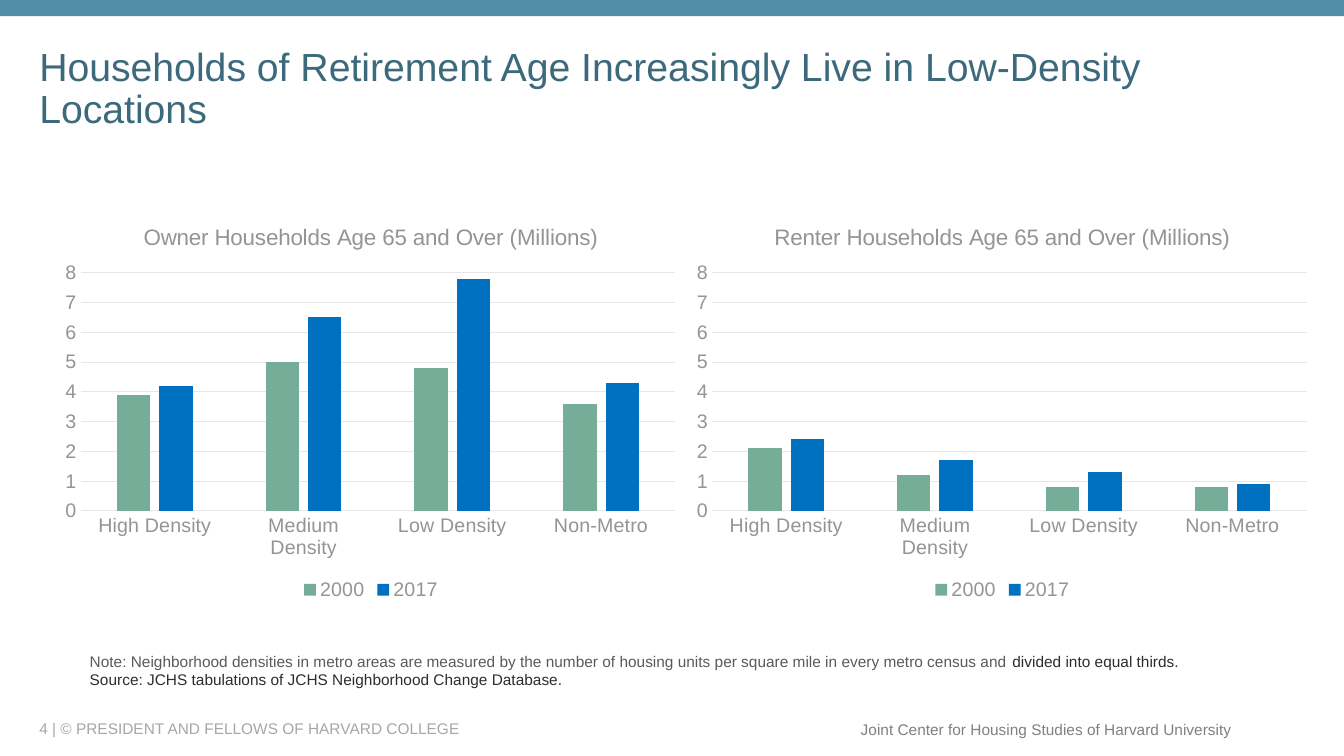
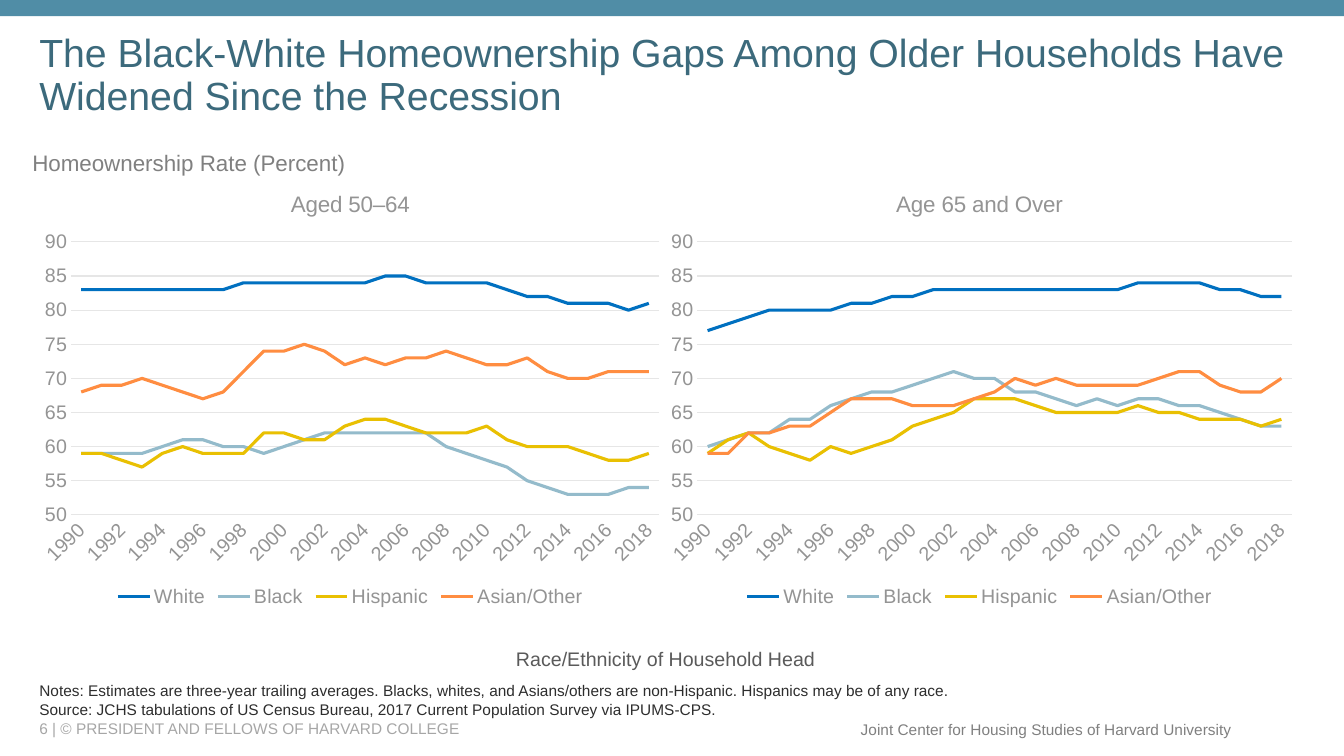
from lxml.etree import SubElement
from pptx import Presentation
from pptx.chart.data import CategoryChartData
from pptx.dml.color import RGBColor
from pptx.enum.chart import XL_CHART_TYPE, XL_LEGEND_POSITION, XL_TICK_MARK
from pptx.enum.shapes import MSO_SHAPE
from pptx.enum.text import MSO_ANCHOR, PP_ALIGN
from pptx.oxml.ns import qn
from pptx.util import Pt

FONT = "Arial"
COLORS = {
    "band": "508DA6", "title": "3C6A7C", "dark": "2D2D2D", "body": "5A5A5A",
    "foot": "808080", "page": "A6A6A6", "axis": "949494", "grid": "E6E6E6",
    "green": "76AD99", "blue": "0070C0", "mist": "94BBCB",
    "gold": "E9C002", "orange": "FF8D41",
}
DENSITY = ["High Density", "Medium Density", "Low Density", "Non-Metro"]
YEARS = [str(year) for year in range(1990, 2019)]

OWNERS = {"2000": [3.9, 5, 4.8, 3.6], "2017": [4.2, 6.5, 7.8, 4.3]}
RENTERS = {"2000": [2.1, 1.2, 0.8, 0.8], "2017": [2.4, 1.7, 1.3, 0.9]}
MIDDLE = {
    "White": [83, 83, 83, 83, 83, 83, 83, 83, 84, 84, 84, 84, 84, 84, 84,
              85, 85, 84, 84, 84, 84, 83, 82, 82, 81, 81, 81, 80, 81],
    "Black": [59, 59, 59, 59, 60, 61, 61, 60, 60, 59, 60, 61, 62, 62, 62,
              62, 62, 62, 60, 59, 58, 57, 55, 54, 53, 53, 53, 54, 54],
    "Hispanic": [59, 59, 58, 57, 59, 60, 59, 59, 59, 62, 62, 61, 61, 63, 64,
                 64, 63, 62, 62, 62, 63, 61, 60, 60, 60, 59, 58, 58, 59],
    "Asian/Other": [68, 69, 69, 70, 69, 68, 67, 68, 71, 74, 74, 75, 74, 72, 73,
                    72, 73, 73, 74, 73, 72, 72, 73, 71, 70, 70, 71, 71, 71],
}
SENIOR = {
    "White": [77, 78, 79, 80, 80, 80, 80, 81, 81, 82, 82, 83, 83, 83, 83,
              83, 83, 83, 83, 83, 83, 84, 84, 84, 84, 83, 83, 82, 82],
    "Black": [60, 61, 62, 62, 64, 64, 66, 67, 68, 68, 69, 70, 71, 70, 70,
              68, 68, 67, 66, 67, 66, 67, 67, 66, 66, 65, 64, 63, 63],
    "Hispanic": [59, 61, 62, 60, 59, 58, 60, 59, 60, 61, 63, 64, 65, 67, 67,
                 67, 66, 65, 65, 65, 65, 66, 65, 65, 64, 64, 64, 63, 64],
    "Asian/Other": [59, 59, 62, 62, 63, 63, 65, 67, 67, 67, 66, 66, 66, 67, 68,
                    70, 69, 70, 69, 69, 69, 69, 70, 71, 71, 69, 68, 68, 70],
}


def paint(name):
    return RGBColor.from_string(COLORS[name])


def style(font, size, color):
    font.name, font.size, font.bold = FONT, Pt(size), False
    font.color.rgb = paint(color)


def add_text(slide, box, lines, size, anchor=MSO_ANCHOR.TOP, align=PP_ALIGN.LEFT,
             wrap=True, space=None):
    """Add a text box; each line is a list of (text, color) runs."""
    frame = slide.shapes.add_textbox(*map(Pt, box)).text_frame
    frame.word_wrap = wrap
    frame.vertical_anchor = anchor
    for index, line in enumerate(lines):
        para = frame.add_paragraph() if index else frame.paragraphs[0]
        para.alignment = align
        para.line_spacing = space
        for text, color in line:
            run = para.add_run()
            run.text = text
            style(run.font, size, color)


def add_base(deck, title, top, page):
    """Add a slide with its band, title and footers."""
    slide = deck.slides.add_slide(deck.slide_layouts[6])
    band = slide.shapes.add_shape(MSO_SHAPE.RECTANGLE, 0, 0, deck.slide_width, Pt(11.5))
    band.shadow.inherit = False
    band.fill.solid()
    band.fill.fore_color.rgb = paint("band")
    band.line.fill.background()
    middle = MSO_ANCHOR.MIDDLE
    add_text(slide, (21, top, 911, 70), [[(title, "title")]], 28, middle, space=0.9)
    add_text(slide, (21, 513.4, 570, 14.4),
             [[(f"{page} | © PRESIDENT AND FELLOWS OF HARVARD COLLEGE", "page")]], 11, middle)
    add_text(slide, (606.2, 510.5, 280.8, 20.9),
             [[("Joint Center for Housing Studies of Harvard University", "foot")]],
             11, middle, PP_ALIGN.RIGHT, wrap=False)
    return slide


def set_plot(chart, area):
    """Fix the inner plot area, as shares of the chart (x, y, w, h)."""
    plot = chart.element.xpath("c:chart/c:plotArea")[0]
    for old in plot.findall(qn("c:layout")):
        plot.remove(old)
    layout = SubElement(plot, qn("c:layout"))
    plot.insert(0, layout)
    manual = SubElement(layout, qn("c:manualLayout"))
    parts = [("layoutTarget", "inner"), ("xMode", "edge"), ("yMode", "edge")]
    for tag, value in parts + list(zip("xywh", area)):
        SubElement(manual, qn(f"c:{tag}")).set("val", str(value))


def add_graph(slide, box, kind, title, cats, data, scale, area):
    """Add a titled chart; scale is (minimum, maximum, step)."""
    source = CategoryChartData(number_format="General")
    source.categories = cats
    for name, values in data.items():
        source.add_series(name, values)
    chart = slide.shapes.add_chart(kind, *map(Pt, box), source).chart
    style(chart.font, 14, "axis")
    chart.has_title = True
    run = chart.chart_title.text_frame.paragraphs[0].add_run()
    run.text = title
    style(run.font, 16, "axis")
    chart.has_legend = True
    chart.legend.position = XL_LEGEND_POSITION.BOTTOM
    chart.legend.include_in_layout = False
    style(chart.legend.font, 14, "axis")
    for axis in (chart.category_axis, chart.value_axis):
        axis.major_tick_mark = axis.minor_tick_mark = XL_TICK_MARK.NONE
        style(axis.tick_labels.font, 14, "axis")
    rules = chart.value_axis
    rules.minimum_scale, rules.maximum_scale, rules.major_unit = scale
    rules.tick_labels.number_format = "0"
    rules.tick_labels.number_format_is_linked = False
    rules.format.line.fill.background()
    for line in (chart.category_axis.format.line, rules.major_gridlines.format.line):
        line.color.rgb = paint("grid")
        line.width = Pt(0.75)
    set_plot(chart, area)
    return chart


def add_bars(slide, box, title, data):
    chart = add_graph(slide, box, XL_CHART_TYPE.COLUMN_CLUSTERED, title, DENSITY,
                      data, (0, 8, 1), (0.043, 0.168, 0.936, 0.597))
    plot = chart.plots[0]
    plot.vary_by_categories = False
    plot.gap_width, plot.overlap = 219, -27
    for series, color in zip(plot.series, ("green", "blue")):
        series.format.fill.solid()
        series.format.fill.fore_color.rgb = paint(color)


def add_lines(slide, box, title, data):
    chart = add_graph(slide, box, XL_CHART_TYPE.LINE, title, YEARS,
                      data, (50, 90, 5), (0.065, 0.16, 0.916, 0.62))
    plot = chart.plots[0]
    plot.vary_by_categories = False
    for series, color in zip(plot.series, ("blue", "mist", "gold", "orange")):
        series.smooth = False
        series.format.line.color.rgb = paint(color)
        series.format.line.width = Pt(2.25)
    axis = chart.element.xpath("c:chart/c:plotArea/c:catAx")[0]
    axis.xpath("c:txPr/a:bodyPr")[0].set("rot", "-2700000")
    skip = SubElement(axis, qn("c:tickLblSkip"))
    skip.set("val", "2")
    axis.find(qn("c:noMultiLvlLbl")).addprevious(skip)


def add_density(deck):
    slide = add_base(
        deck, "Households of Retirement Age Increasingly Live in Low-Density Locations", 29, 4)
    add_text(slide, (57, 453.5, 846, 42), [
        [("Note: Neighborhood densities in metro areas are measured by the number of "
          "housing units per square mile in every metro census and ", "body"),
         ("divided into equal thirds.", "dark")],
        [("Source: JCHS tabulations of JCHS Neighborhood Change Database.", "dark")],
    ], 11, MSO_ANCHOR.BOTTOM)
    for left, group, data in ((38, "Owner", OWNERS), (489, "Renter", RENTERS)):
        add_bars(slide, (left, 147, 454, 285),
                 f"{group} Households Age 65 and Over (Millions)", data)


def add_gaps(deck):
    slide = add_base(
        deck, "The Black-White Homeownership Gaps Among Older Households Have "
        "Widened Since the Recession", 19.5, 6)
    add_text(slide, (21, 474.5, 846, 42), [
        [("Notes: Estimates are three-year trailing averages. Blacks, whites, and "
          "Asians/others are non-Hispanic. Hispanics may be of any race.", "dark")],
        [("Source: JCHS tabulations of US Census Bureau, 2017 Current Population "
          "Survey via IPUMS-CPS.", "dark")],
    ], 11, MSO_ANCHOR.BOTTOM)
    add_lines(slide, (21, 122.5, 458.5, 314.5), "Aged 50–64", MIDDLE)
    add_lines(slide, (468, 122.5, 463.5, 314.5), "Age 65 and Over", SENIOR)
    add_text(slide, (16, 103, 396, 26.5), [[("Homeownership Rate (Percent)", "foot")]], 16)
    add_text(slide, (361.5, 458.5, 247, 24.5),
             [[("Race/Ethnicity of Household Head", "body")]], 14)


def main():
    deck = Presentation()
    deck.slide_width, deck.slide_height = Pt(960), Pt(540)
    add_density(deck)
    add_gaps(deck)
    deck.save("out.pptx")


if __name__ == "__main__":
    main()
